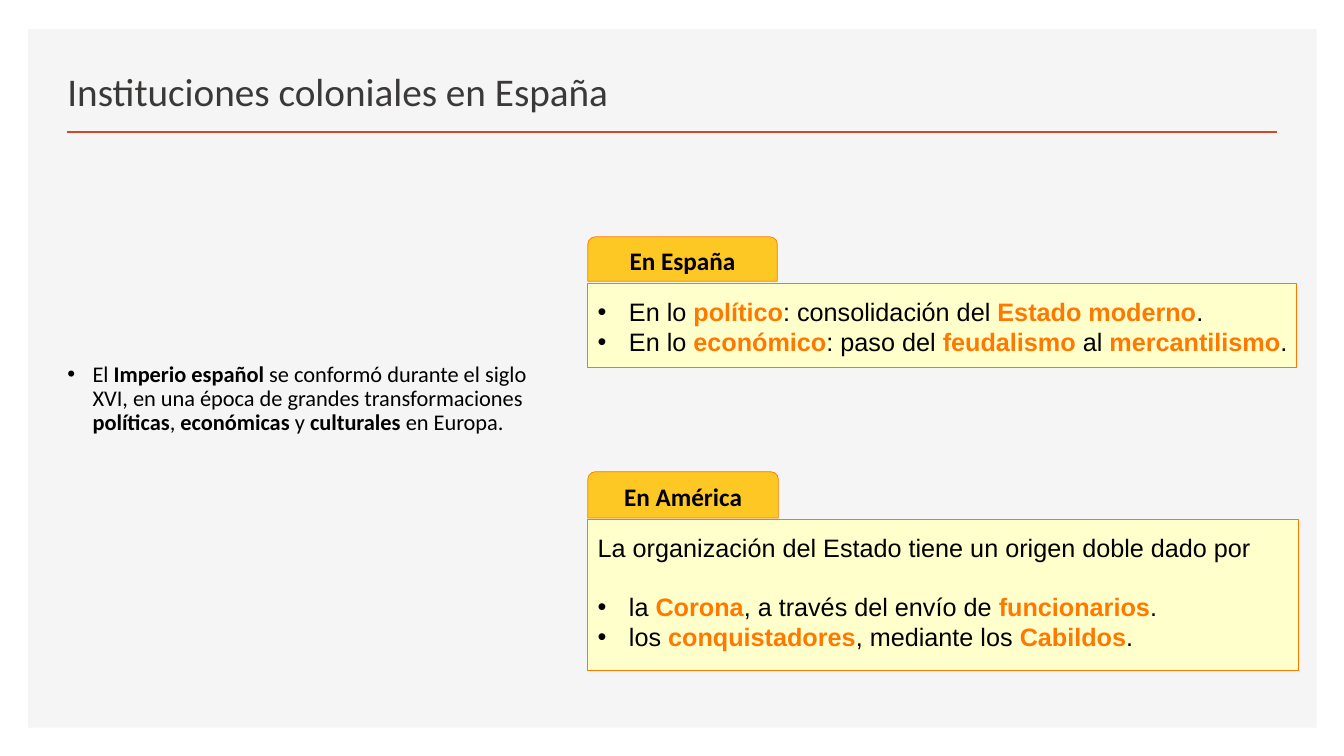
from dataclasses import dataclass

from lxml.etree import SubElement
from pptx import Presentation
from pptx.dml.color import RGBColor
from pptx.enum.shapes import MSO_CONNECTOR as Connector, MSO_SHAPE as Shape
from pptx.enum.text import MSO_ANCHOR as Anchor, PP_ALIGN as Align
from pptx.oxml.ns import qn
from pptx.util import Inches, Pt

BLACK = "000000"
ORANGE = "FF7800"
PANEL_LEFT = 5.83


@dataclass(frozen=True)
class Line:
    text: str  # words between asterisks are bold
    indent: float = 0.0  # inches; a bullet hangs in any indent
    before: float = 0.0  # points


@dataclass(frozen=True)
class Style:
    font: str
    size: float
    color: str = BLACK
    strong_color: str = BLACK
    spacing: float = 1.0


@dataclass(frozen=True)
class Panel:
    heading: str
    tab_top: float
    tab_width: float
    tab_height: float
    top: float
    width: float
    height: float
    text_width: float
    text_height: float
    lines: tuple[Line, ...]


TITLE_STYLE = Style("Calibri", 28, "3B3838", spacing=0.9)
BODY_STYLE = Style("Calibri", 16, spacing=0.9)
TAB_STYLE = Style("Calibri", 18)
PANEL_STYLE = Style("Arial", 18, strong_color=ORANGE)

PANELS = (
    Panel("En España", 2.35, 1.88, 0.44, 2.81, 7.03, 0.84, 7.11, 0.71, (
        Line("En lo *político*: consolidación del *Estado moderno*.", 0.31),
        Line("En lo *económico*: paso del *feudalismo* al *mercantilismo*.", 0.31),
    )),
    Panel("En América", 4.68, 1.89, 0.46, 5.15, 7.05, 1.5, 6.83, 1.31, (
        Line("La organización del Estado tiene un origen doble dado por"),
        Line("la *Corona*, a través del envío de *funcionarios*.", 0.31, 20.7),
        Line("los *conquistadores*, mediante los *Cabildos*.", 0.31),
    )),
)


def color(value: str) -> RGBColor:
    return RGBColor.from_string(value)


def add_bullet(para, indent: float) -> None:
    properties = para._p.get_or_add_pPr()
    properties.set("marL", str(Inches(indent)))
    properties.set("indent", str(-Inches(indent)))
    SubElement(properties, qn("a:buFont")).set("typeface", "Arial")
    SubElement(properties, qn("a:buChar")).set("char", "•")


def write_lines(frame, lines: tuple[Line, ...], style: Style) -> None:
    frame.word_wrap = True
    for index, line in enumerate(lines):
        para = frame.add_paragraph() if index else frame.paragraphs[0]
        para.line_spacing = style.spacing
        para.space_before = Pt(line.before)
        if line.indent:
            add_bullet(para, line.indent)
        for part, words in enumerate(line.text.split("*")):
            if not words:
                continue
            strong = part % 2 == 1
            span = para.add_run()
            span.text = words
            span.font.name = style.font
            span.font.size = Pt(style.size)
            span.font.bold = strong
            span.font.color.rgb = color(style.strong_color if strong else style.color)


def add_text(shapes, left: float, top: float, width: float, height: float,
             lines: tuple[Line, ...], style: Style, anchor=Anchor.TOP) -> None:
    box = shapes.add_textbox(Inches(left), Inches(top), Inches(width), Inches(height))
    box.text_frame.vertical_anchor = anchor
    write_lines(box.text_frame, lines, style)


def add_block(shapes, kind, left: float, top: float, width: float, height: float,
              fill: str, border: str = ""):
    block = shapes.add_shape(kind, Inches(left), Inches(top), Inches(width), Inches(height))
    block.shadow.inherit = False
    block.fill.solid()
    block.fill.fore_color.rgb = color(fill)
    if border:
        block.line.color.rgb = color(border)
        block.line.width = Pt(0.5)
    else:
        block.line.fill.background()
    return block


def set_opacity(block, percent: int) -> None:
    fill = block._element.spPr.find(qn("a:solidFill"))
    SubElement(fill[0], qn("a:alpha")).set("val", str(percent * 1000))


def add_panel(page, panel: Panel) -> None:
    shapes = page.shapes.add_group_shape().shapes
    add_block(shapes, Shape.RECTANGLE, PANEL_LEFT, panel.top, panel.width, panel.height,
              "FFFFCC", ORANGE)
    add_text(shapes, PANEL_LEFT, panel.top + 0.08, panel.text_width, panel.text_height,
             panel.lines, PANEL_STYLE)
    tab = add_block(shapes, Shape.ROUND_2_SAME_RECTANGLE, PANEL_LEFT, panel.tab_top,
                    panel.tab_width, panel.tab_height, "FFC000", ORANGE)
    set_opacity(tab, 85)
    tab.text_frame.vertical_anchor = Anchor.MIDDLE
    write_lines(tab.text_frame, (Line(f"*{panel.heading}*"),), TAB_STYLE)
    tab.text_frame.paragraphs[0].alignment = Align.CENTER


def add_title_rule(page) -> None:
    rule = page.shapes.add_connector(Connector.STRAIGHT, Inches(0.66), Inches(1.31),
                                     Inches(12.67), Inches(1.31))
    rule.line.color.rgb = color("D24726")
    rule.line.width = Pt(2)
    SubElement(rule._element.spPr, qn("a:effectLst"))


def main() -> None:
    deck = Presentation()
    deck.slide_width, deck.slide_height = Inches(13.33), Inches(7.5)
    page = deck.slides.add_slide(deck.slide_layouts[6])

    add_block(page.shapes, Shape.RECTANGLE, 0.28, 0.29, 12.78, 6.93, "F5F5F5")
    add_title_rule(page)
    add_text(page.shapes, 0.57, 0.49, 7.52, 0.7,
             (Line("Instituciones coloniales en España"),), TITLE_STYLE, Anchor.BOTTOM)
    add_text(page.shapes, 0.57, 3.55, 4.83, 2.71, (Line(
        "El *Imperio español* se conformó durante el siglo XVI, en una época de grandes "
        "transformaciones *políticas*, *económicas* y *culturales* en Europa.", 0.25),),
        BODY_STYLE)
    for panel in PANELS:
        add_panel(page, panel)

    deck.save("out.pptx")


if __name__ == "__main__":
    main()
